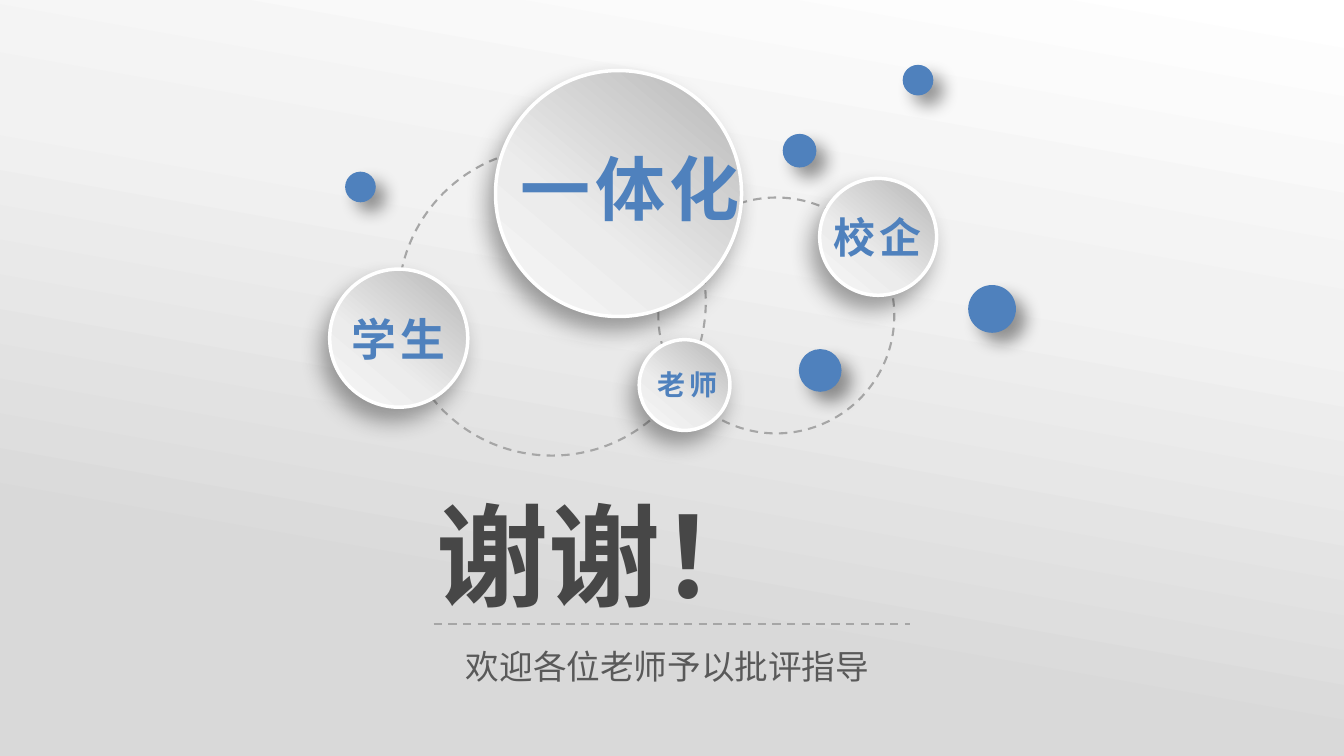
import pptx
import pptx.dml.color
import pptx.enum.dml
import pptx.enum.shapes
import pptx.enum.text
import pptx.oxml
import pptx.oxml.ns
import pptx.util

THEME = {
    "blue": "4F81BD", "title": "474747", "body": "595959",
    "dash": "A6A6A6", "rim": "FFFFFF",
    "backdrop": [(0, "FFFFFF"), (34, "F2F2F2"), (76, "D9D9D9")],
    "disc": [(9, "BEBEBE"), (63, "ECECEC"), (100, "F7F7F7")],
    "heavy": "Noto Sans CJK SC", "plain": "Arial",
    "title_size": 80, "body_size": 24,
}
NS = pptx.oxml.ns.nsdecls("a")
RGB = pptx.dml.color.RGBColor.from_string
OVAL = pptx.enum.shapes.MSO_SHAPE.OVAL
DASH = pptx.enum.dml.MSO_LINE.DASH
ALIGN = pptx.enum.text.PP_ALIGN

prs = pptx.Presentation()
prs.slide_width = pptx.util.Inches(13.33)
prs.slide_height = pptx.util.Inches(7.5)
s = prs.slides.add_slide(prs.slide_layouts[6])
cell = prs.slide_height / 750  # grid of 1333 columns by 750 rows


def add_shape(kind, cx, cy, w, h, fill=None, angle=0, line=None, width=1, shadow=None):
    """Shape centred on a grid point; fill is a colour or a list of gradient stops."""
    sp = s.shapes.add_shape(kind, *(round(v * cell) for v in (cx - w / 2, cy - h / 2, w, h)))
    sp.shadow.inherit = False
    if isinstance(fill, list):
        stops = "".join(f'<a:gs pos="{pos * 1000}"><a:srgbClr val="{c}"/></a:gs>' for pos, c in fill)
        sp._element.spPr.find(pptx.oxml.ns.qn("a:prstGeom")).addnext(pptx.oxml.parse_xml(
            f'<a:gradFill {NS} rotWithShape="1"><a:gsLst>{stops}</a:gsLst>'
            f'<a:lin ang="{angle * 60000}" scaled="0"/></a:gradFill>'))
    elif fill:
        sp.fill.solid()
        sp.fill.fore_color.rgb = RGB(fill)
    else:
        sp.fill.background()
    if line:
        sp.line.color.rgb = RGB(line)
        sp.line.width = pptx.util.Pt(width)
    else:
        sp.line.fill.background()
    if shadow:
        color, alpha, blur, dist, direction = shadow
        sp._element.spPr.find(pptx.oxml.ns.qn("a:effectLst")).append(pptx.oxml.parse_xml(
            f'<a:outerShdw {NS} blurRad="{blur * 12700}" dist="{dist * 12700}" '
            f'dir="{direction * 60000}" algn="ctr" rotWithShape="0"><a:srgbClr val="{color}">'
            f'<a:alpha val="{alpha * 1000}"/></a:srgbClr></a:outerShdw>'))
    return sp


def add_text(text, cx, cy, w, h, size, color, font, bold=False, align=ALIGN.CENTER, spacing=0):
    """Text box centred on a grid point."""
    tf = s.shapes.add_textbox(*(round(v * cell) for v in (cx - w / 2, cy - h / 2, w, h))).text_frame
    tf.word_wrap = True
    tf.auto_size = pptx.enum.text.MSO_AUTO_SIZE.SHAPE_TO_FIT_TEXT
    tf.vertical_anchor = pptx.enum.text.MSO_ANCHOR.MIDDLE
    p = tf.paragraphs[0]
    p.text, p.alignment = text, align
    p.font.size, p.font.bold, p.font.name = pptx.util.Pt(size), bold, font
    p.font.color.rgb = RGB(color)
    props = p._p.pPr.find(pptx.oxml.ns.qn("a:defRPr"))
    props.set("spc", str(spacing * 100))
    props.find(pptx.oxml.ns.qn("a:latin")).addnext(
        pptx.oxml.parse_xml(f'<a:ea {NS} typeface="{font}"/>'))


# Backdrop
add_shape(pptx.enum.shapes.MSO_SHAPE.RECTANGLE, 666.5, 375, 1333, 750, THEME["backdrop"], 100)

# Closing words
add_text("谢谢！", 667, 549.5, 488, 145, THEME["title_size"], THEME["title"], THEME["heavy"],
         bold=True, align=ALIGN.JUSTIFY)
add_text("欢迎各位老师予以批评指导", 662, 660.5, 432, 51, THEME["body_size"], THEME["body"], THEME["plain"])

# Dashed rule
rule = s.shapes.add_connector(pptx.enum.shapes.MSO_CONNECTOR.STRAIGHT,
                              *(round(v * cell) for v in (430, 619, 903, 619)))
rule.line.color.rgb = RGB(THEME["dash"])
rule.line.width = pptx.util.Pt(1.5)
rule.line.dash_style = DASH
rule._element.spPr.append(pptx.oxml.parse_xml(f"<a:effectLst {NS}/>"))

# Dashed orbits: centre, diameter
for cx, cy, d in [(770, 313, 234), (547.5, 299.5, 305)]:
    orbit = add_shape(OVAL, cx, cy, d, d, line=THEME["dash"], width=1.5)
    orbit.line.dash_style = DASH

# Blue dots: centre, diameter
for cx, cy, d in [(984, 306.5, 46), (793, 149.5, 32), (357.5, 185.5, 29),
                  (813.5, 367.5, 41), (910.5, 79.5, 29)]:
    add_shape(OVAL, cx, cy, d, d, THEME["blue"], line=THEME["blue"],
              shadow=("000000", 40, 12, 10, 45))

# Labelled discs: label, centre, diameter, label centre, label size, type size
for label, cx, cy, d, tx, ty, tw, th, size in [
    ("老师", 679, 382, 90, 682, 381.5, 126, 45, 20),
    ("一体化", 613.5, 192, 244, 625, 186, 248, 94, 50),
    ("校企", 871, 235, 116, 870.5, 234.5, 121, 61, 30),
    ("学生", 395.5, 335.5, 137, 395.5, 336, 121, 64, 32),
]:
    add_shape(OVAL, cx, cy, d, d, THEME["disc"], 130, THEME["rim"], 2.5,
              shadow=("1A1A1A", 40, 16, 10, 120))
    add_text(label, tx, ty, tw, th, size, THEME["blue"], THEME["heavy"], bold=True, spacing=3)

prs.save("out.pptx")
